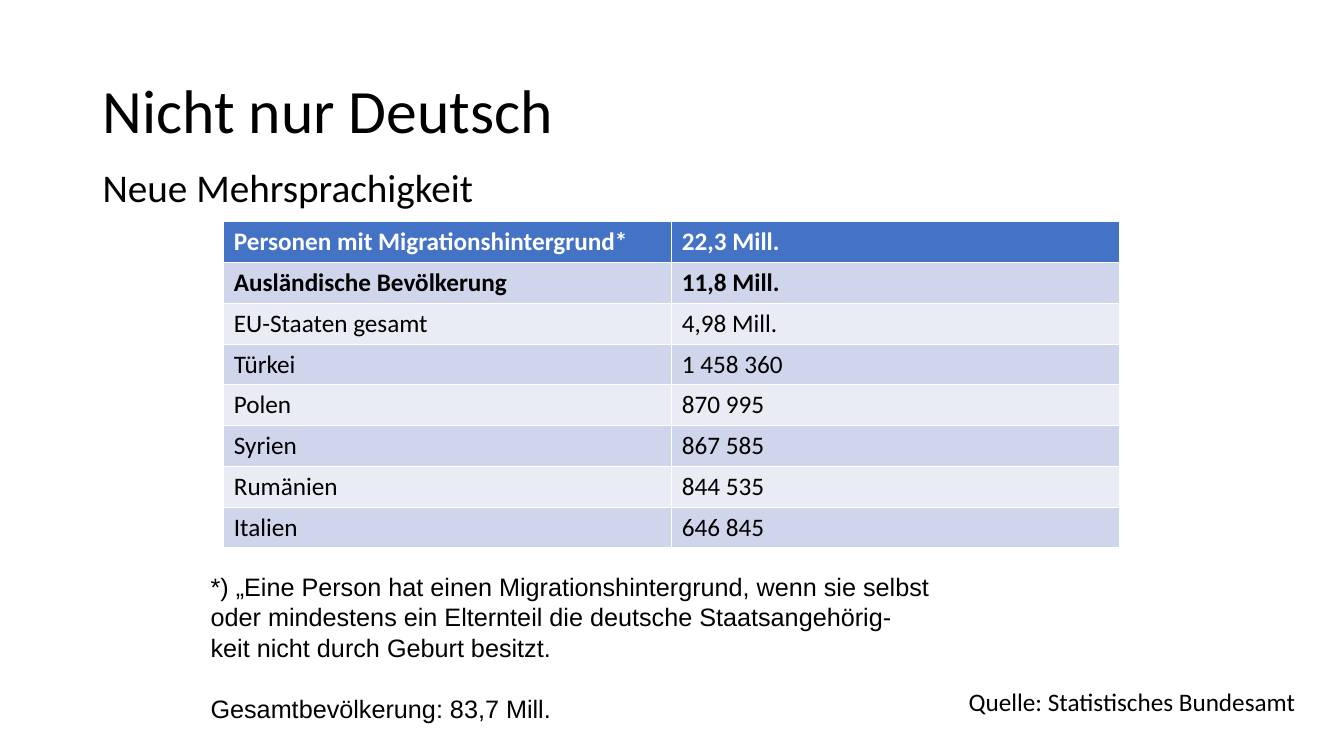
from dataclasses import dataclass

from pptx import Presentation
from pptx.dml.color import RGBColor
from pptx.enum.text import MSO_ANCHOR
from pptx.util import Inches, Pt


@dataclass(frozen=True)
class Theme:
    text: str = "000000"
    inverse: str = "FFFFFF"
    header: str = "4472C4"
    bands: tuple = ("CFD5EA", "E9EBF5")
    heading_font: str = "Calibri"
    note_font: str = "Arial"
    title_size: int = 44
    subtitle_size: int = 28
    body_size: int = 18


THEME = Theme()
WIDTH, HEIGHT = Inches(13.33), Inches(7.5)
COLUMN, ROW = WIDTH / 100, HEIGHT / 100

POPULATION = [
    ("Personen mit Migrationshintergrund*", "22,3 Mill."),
    ("Ausländische Bevölkerung", "11,8 Mill."),
    ("EU-Staaten gesamt", "4,98 Mill."),
    ("Türkei", "1\u00a0458\u00a0360"),
    ("Polen", "870\u00a0995"),
    ("Syrien", "867\u00a0585"),
    ("Rumänien", "844\u00a0535"),
    ("Italien", "646\u00a0845"),
]
BOLD_ROWS = 2

DEFINITION = "\v".join([
    "*) „Eine Person hat einen Migrationshintergrund, wenn sie selbst",
    "oder mindestens ein Elternteil die deutsche Staatsangehörig-",
    "keit nicht durch Geburt besitzt.",
])


def grid_area(left, top, width, height):
    return [round(length) for length in
            (left * COLUMN, top * ROW, width * COLUMN, height * ROW)]


def apply_format(target, values):
    for name, value in values.items():
        setattr(target, name, value)


def write_paragraph(paragraph, text, size, font=THEME.heading_font,
                    color=THEME.text, bold=False, layout=None):
    paragraph.text = text
    apply_format(paragraph, layout or {})
    for run in paragraph.runs:
        apply_format(run.font, {"name": font, "size": Pt(size), "bold": bold})
        run.font.color.rgb = RGBColor.from_string(color)


def add_text(slide, area, texts, size, font=THEME.heading_font, frame_format=None, layout=None):
    frame = slide.shapes.add_textbox(*grid_area(*area)).text_frame
    apply_format(frame, {"word_wrap": True, **(frame_format or {})})
    for index, text in enumerate(texts):
        paragraph = frame.add_paragraph() if index else frame.paragraphs[0]
        write_paragraph(paragraph, text, size, font, layout=layout)
    return frame


def add_population_table(slide, area, records):
    table = slide.shapes.add_table(len(records), len(records[0]), *grid_area(*area)).table
    for row, record in enumerate(records):
        fill = THEME.bands[(row - 1) % 2] if row else THEME.header
        color = THEME.text if row else THEME.inverse
        for column, text in enumerate(record):
            cell = table.cell(row, column)
            cell.fill.solid()
            cell.fill.fore_color.rgb = RGBColor.from_string(fill)
            write_paragraph(cell.text_frame.paragraphs[0], text, THEME.body_size,
                            color=color, bold=row < BOLD_ROWS)


def main():
    presentation = Presentation()
    apply_format(presentation, {"slide_width": WIDTH, "slide_height": HEIGHT})
    slide = presentation.slides.add_slide(presentation.slide_layouts[6])

    add_text(slide, (6.9, 5.33, 86.25, 19.33), ["Nicht nur Deutsch"], THEME.title_size,
             frame_format={"vertical_anchor": MSO_ANCHOR.MIDDLE},
             layout={"line_spacing": 0.9})
    add_text(slide, (6.9, 21.6, 86.25, 63.47), ["Neue Mehrsprachigkeit"], THEME.subtitle_size,
             layout={"line_spacing": 0.9, "space_before": Pt(10)})
    add_text(slide, (71.34, 90.13, 26.1, 5.33), ["Quelle: Statistisches Bundesamt"],
             THEME.body_size, frame_format={"word_wrap": False})
    add_population_table(slide, (16.65, 29.33, 66.68, 43.2), POPULATION)
    notes = add_text(slide, (14.93, 74.93, 75.17, 21.6),
                     [DEFINITION, "Gesamtbevölkerung: 83,7 Mill."],
                     THEME.body_size, THEME.note_font)
    notes.paragraphs[1].space_before = Pt(22)

    presentation.save("out.pptx")


main()
